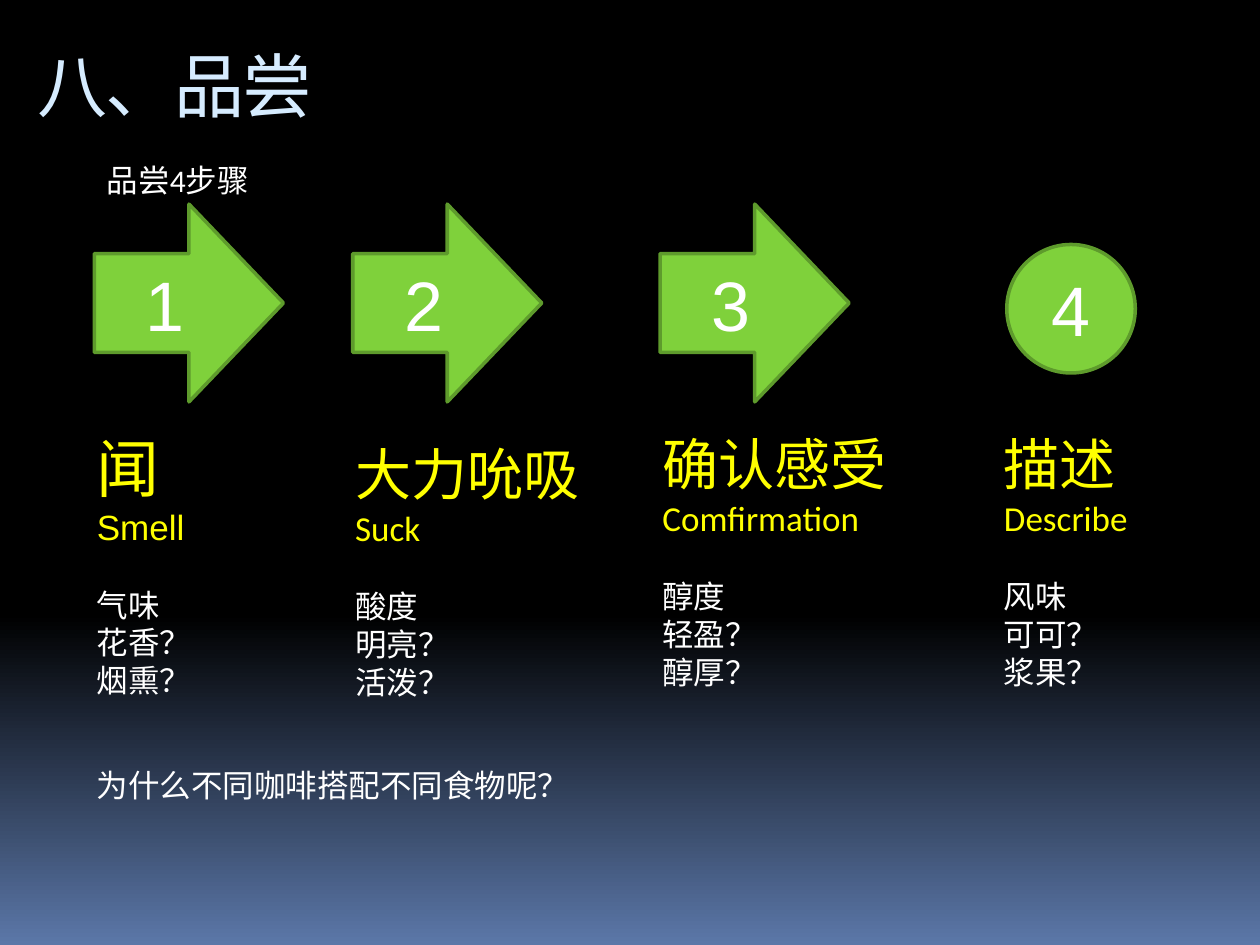
from lxml import etree
from pptx import Presentation
from pptx.dml.color import RGBColor
from pptx.enum.shapes import MSO_SHAPE
from pptx.enum.text import MSO_ANCHOR, PP_ALIGN
from pptx.util import Inches, Pt

ARROW, OVAL = MSO_SHAPE.RIGHT_ARROW, MSO_SHAPE.OVAL
TOP, MIDDLE = MSO_ANCHOR.TOP, MSO_ANCHOR.MIDDLE
LEFT, CENTER = PP_ALIGN.LEFT, PP_ALIGN.CENTER

BLACK = RGBColor(0x00, 0x00, 0x00)
BLUE = RGBColor(0x5B, 0x77, 0xA8)
PALE = RGBColor(0xD6, 0xEC, 0xFF)
WHITE = RGBColor(0xFF, 0xFF, 0xFF)
YELLOW = RGBColor(0xFF, 0xFF, 0x00)
GREEN = RGBColor(0x7F, 0xD1, 0x3B)
EDGE = RGBColor(0x5E, 0x9B, 0x2C)

# Text box left, top, width; heading, its size and font; English and its font; notes
STEPS = [
    (0.67, 3.36, 2.13, "闻", 36, "Arial", "Smell", "Arial", ["气味", "花香？", "烟熏？"]),
    (2.72, 3.44, 2.28, "大力吮吸", 32, "Calibri", "Suck", "Calibri", ["酸度", "明亮？", "活泼？"]),
    (5.16, 3.36, 2.13, "确认感受", 32, "Arial", "Comfirmation", "Calibri", ["醇度", "轻盈？", "醇厚？"]),
    (7.87, 3.36, 2.13, "描述", 32, "Calibri", "Describe", "Calibri", ["风味", "可可？", "浆果？"]),
]
MARKS = [
    (ARROW, 0.75, 1.62, 1.5, 1.57),
    (ARROW, 2.8, 1.62, 1.5, 1.57),
    (ARROW, 5.24, 1.62, 1.5, 1.57),
    (OVAL, 7.99, 1.94, 1.02, 1.02),
]


def paint_back(slide):
    """Black down to 65 % of the height, then fading to blue."""
    fill = slide.background.fill
    fill.gradient()
    fill.gradient_angle = 270
    for stop, place, color in zip(fill.gradient_stops, (0.65, 1), (BLACK, BLUE)):
        stop.position = place
        stop.color.rgb = color


def add_run(para, text, size, color, font="Calibri"):
    run = para.add_run()
    run.text = text
    run.font.size = Pt(size)
    run.font.name = font
    run.font.color.rgb = color
    return run


def add_title(slide, text):
    title = slide.shapes.title
    title.left, title.top = Inches(0.2), Inches(0.29)
    title.width, title.height = Inches(4.17), Inches(0.77)
    frame = title.text_frame
    frame.vertical_anchor = TOP
    para = frame.paragraphs[0]
    para.alignment = LEFT
    run = add_run(para, text, 40, PALE, "Arial")
    run.font._element.set("spc", "-100")


def add_box(slide, left, top, width, height):
    box = slide.shapes.add_textbox(Inches(left), Inches(top), Inches(width), Inches(height))
    box.text_frame.word_wrap = True
    return box.text_frame


def add_note(slide, text, *place):
    add_run(add_box(slide, *place).paragraphs[0], text, 18, WHITE)


def add_step(slide, left, top, width, head, size, face, word, font, notes):
    frame = add_box(slide, left, top, width, 2.25)
    add_run(frame.paragraphs[0], head, size, YELLOW, face)
    add_run(frame.add_paragraph(), word, 20, YELLOW, font)
    for i, note in enumerate(notes):
        para = frame.add_paragraph()
        if i == 0:
            para.space_before = Pt(22)
        add_run(para, note, 18, WHITE)


def add_mark(slide, number, kind, left, top, width, height):
    mark = slide.shapes.add_shape(kind, Inches(left), Inches(top), Inches(width), Inches(height))
    mark.shadow.inherit = False
    mark.fill.solid()
    mark.fill.fore_color.rgb = GREEN
    mark.line.color.rgb = EDGE
    mark.line.width = Pt(2)
    frame = mark.text_frame
    frame.vertical_anchor = MIDDLE
    para = frame.paragraphs[0]
    para.alignment = CENTER
    add_run(para, str(number), 40, WHITE, "Arial")


def main():
    deck = Presentation()
    deck.slide_width, deck.slide_height = Inches(10), Inches(7.5)
    slide = deck.slides.add_slide(deck.slide_layouts[5])
    paint_back(slide)
    add_title(slide, "八、品尝")
    add_note(slide, "品尝4步骤", 0.75, 1.23, 1.34, 0.4)
    for step in STEPS:
        add_step(slide, *step)
    for number, mark in enumerate(MARKS, 1):
        add_mark(slide, number, *mark)
    add_note(slide, "为什么不同咖啡搭配不同食物呢？", 0.67, 6.03, 4.49, 0.4)
    deck.save("out.pptx")


if __name__ == "__main__":
    main()
